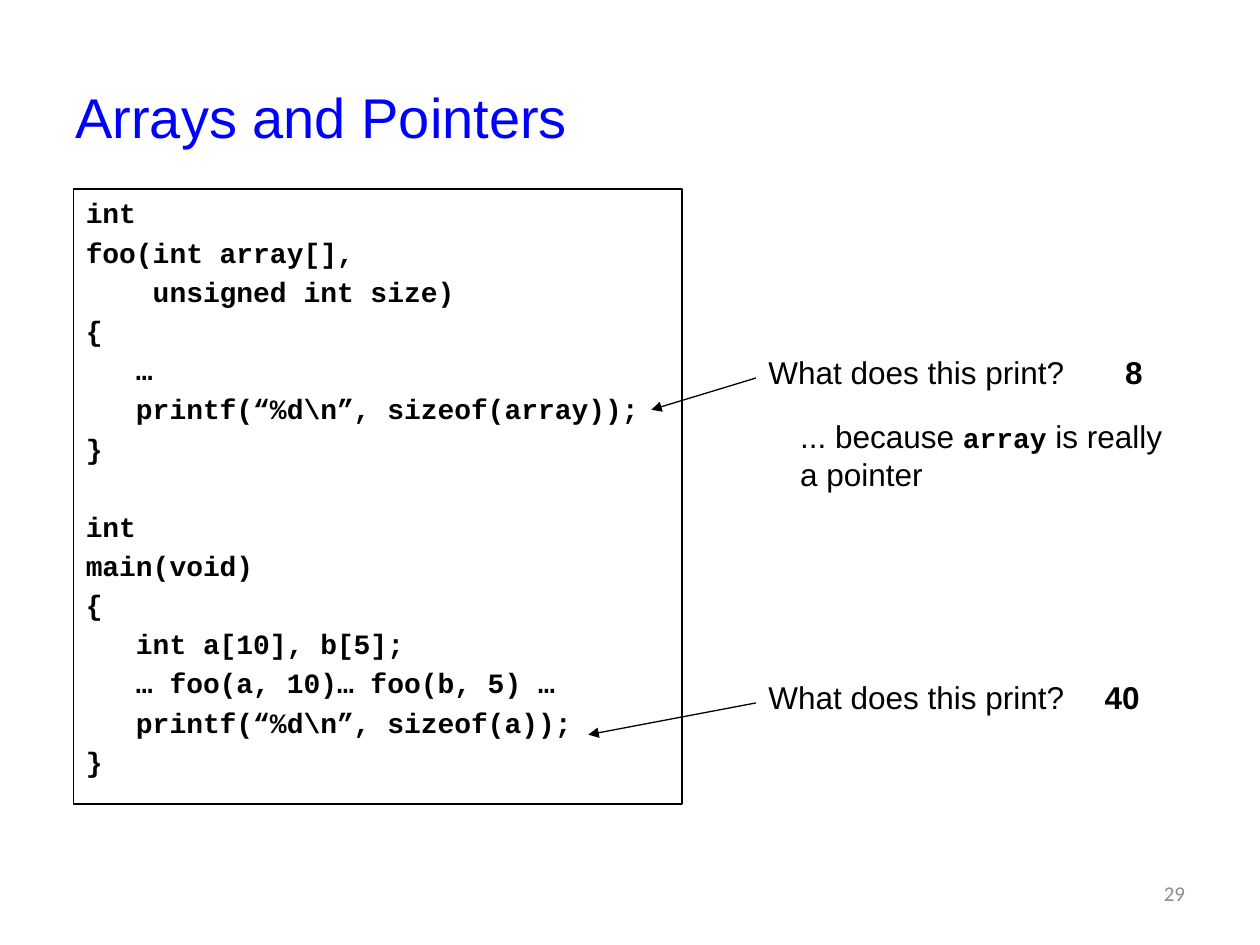
from lxml import etree
from pptx import Presentation
from pptx import util as u
from pptx.dml.color import RGBColor
from pptx.enum import shapes, text
from pptx.oxml.ns import qn

BLACK = RGBColor(0x00, 0x00, 0x00)
BLUE = RGBColor(0x00, 0x00, 0xFF)
GREY = RGBColor(0x8C, 0x8C, 0x8C)
CODE_FONT = "Courier New"
CODE_SIZE = 16
LINE_GAP = 0.2 * CODE_SIZE   # points between code lines
FUNCTION_GAP = 25.5          # one empty code line with its gaps

FUNCTIONS = [
    ["int", "foo(int array[],", "    unsigned int size)", "{", "   …",
     "   printf(“%d\\n”, sizeof(array));", "}"],
    ["int", "main(void)", "{", "   int a[10], b[5];",
     "   … foo(a, 10)… foo(b, 5) …", "   printf(“%d\\n”, sizeof(a));", "}"],
]


def add_run(paragraph, words, size=18, font="Arial", color=BLACK, bold=False):
    run = paragraph.add_run()
    run.text = words
    run.font.size = u.Pt(size)
    run.font.name = font
    run.font.bold = bold
    run.font.color.rgb = color


def add_text(slide, box, words, wrap=False, anchor=text.MSO_ANCHOR.TOP,
             align=text.PP_ALIGN.LEFT, **style):
    """Each line of words is a string or a list of (string, style) runs."""
    frame = slide.shapes.add_textbox(*map(u.Cm, box)).text_frame
    frame.word_wrap = wrap
    frame.vertical_anchor = anchor
    for i, line in enumerate(words):
        paragraph = frame.add_paragraph() if i else frame.paragraphs[0]
        paragraph.alignment = align
        runs = [(line, {})] if isinstance(line, str) else line
        for part, own_style in runs:
            add_run(paragraph, part, **{**style, **own_style})
    return frame


def add_arrow(slide, start, end):
    arrow = slide.shapes.add_connector(
        shapes.MSO_CONNECTOR.STRAIGHT, *map(u.Cm, (*start, *end)))
    arrow.line.color.rgb = BLACK
    arrow.line.width = u.Pt(0.75)
    properties = arrow._element.spPr
    etree.SubElement(properties.find(qn("a:ln")), qn("a:tailEnd"), type="triangle")
    etree.SubElement(properties, qn("a:effectLst"))


def add_code(slide, box):
    panel = slide.shapes.add_shape(shapes.MSO_SHAPE.RECTANGLE, *map(u.Cm, box))
    panel.shadow.inherit = False
    panel.fill.background()
    panel.line.color.rgb = BLACK
    panel.line.width = u.Pt(0.75)
    # Code lines, the functions set apart by spacing
    lines = [line for function in FUNCTIONS for line in function]
    frame = add_text(slide, box, lines, wrap=True, size=CODE_SIZE,
                     font=CODE_FONT, bold=True)
    frame.margin_top = u.Cm(0.14)
    for paragraph in frame.paragraphs[1:]:
        paragraph.space_before = u.Pt(LINE_GAP)
    frame.paragraphs[len(FUNCTIONS[0])].space_before = u.Pt(FUNCTION_GAP)


def add_question(slide, box, answer, answer_offset, answer_width, arrow_reach):
    left, top, width, height = box
    add_arrow(slide, (left, top + 0.63), (left - arrow_reach, top + 1.27))
    add_text(slide, box, ["What does this print?"])
    add_text(slide, (left + answer_offset, top, answer_width, height),
             [answer], bold=True)


def add_explanation(slide, box):
    array_style = dict(size=CODE_SIZE, font=CODE_FONT, bold=True)
    add_text(slide, box, [
        [("... because ", {}), ("array", array_style), (" is really", {})],
        "a pointer"])


def main():
    deck = Presentation()
    deck.slide_width, deck.slide_height = u.Cm(25.4), u.Cm(19.05)
    slide = deck.slides.add_slide(deck.slide_layouts[6])

    # Title
    add_text(slide, (1.27, 0.76, 22.86, 3.18), ["Arrays and Pointers"], wrap=True,
             anchor=text.MSO_ANCHOR.MIDDLE, size=32, color=BLUE)
    # Program and the questions about its output
    add_code(slide, (1.48, 3.81, 12.27, 12.4))
    add_question(slide, (15.24, 6.99, 6.48, 1.02), "8", 7.19, 0.86, 2.11)
    add_explanation(slide, (15.88, 8.28, 7.82, 1.78))
    add_question(slide, (15.24, 13.54, 6.48, 1.02), "40", 6.78, 1.22, 3.38)
    # Slide number
    add_text(slide, (18.21, 17.35, 5.93, 1.32), ["29"], wrap=True,
             anchor=text.MSO_ANCHOR.MIDDLE, align=text.PP_ALIGN.RIGHT,
             size=12, font="Calibri", color=GREY)
    deck.save("out.pptx")


if __name__ == "__main__":
    main()
